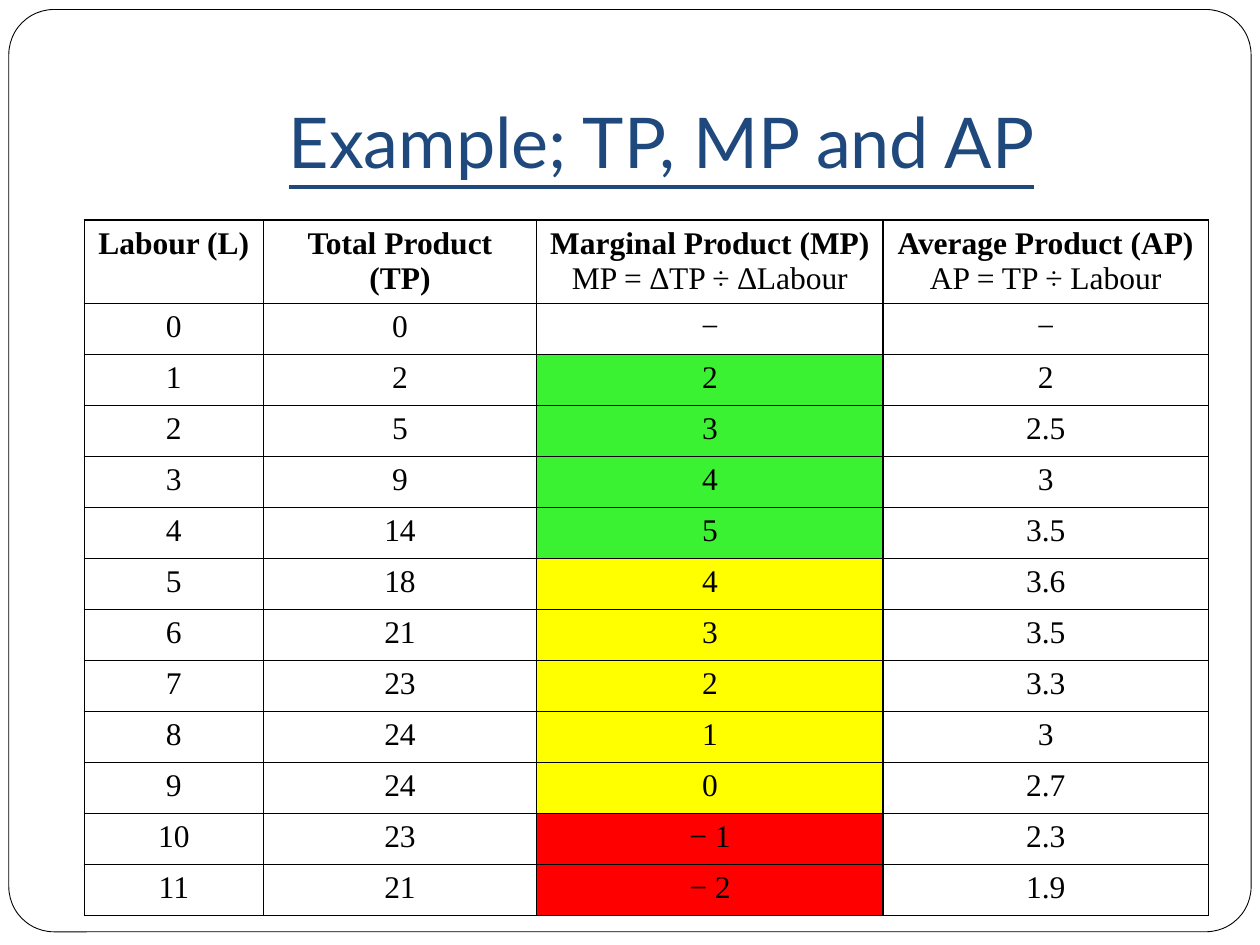
from lxml import etree
from pptx import Presentation
from pptx.dml.color import RGBColor
from pptx.enum.shapes import MSO_SHAPE
from pptx.enum.text import MSO_ANCHOR, PP_ALIGN
from pptx.oxml.ns import qn
from pptx.util import Inches, Pt

ROUND = MSO_SHAPE.ROUNDED_RECTANGLE
BOTTOM = MSO_ANCHOR.BOTTOM
CENTER = PP_ALIGN.CENTER

INK = {
    "black": "000000",
    "white": "FFFFFF",
    "navy": "1F497D",
    "green": "3BF232",
    "yellow": "FFFF00",
    "red": "FF0000",
}
HEADS = [
    ["Labour (L)"],
    ["Total Product (TP)"],
    ["Marginal Product (MP)", "MP = ∆TP ÷ ∆Labour"],
    ["Average Product (AP)", "AP = TP ÷ Labour"],
]
TOTALS = [0, 2, 5, 9, 14, 18, 21, 23, 24, 24, 23, 21]
COLS = [1.42, 2.17, 2.75, 2.58]
HEAD, ROW = 0.66, 0.405


def color(name):
    return RGBColor.from_string(INK[name])


class Deck:
    def __init__(self, wide, high):
        self.prs = Presentation()
        self.prs.slide_width = Inches(wide)
        self.prs.slide_height = Inches(high)
        self.slide = self.prs.slides.add_slide(self.prs.slide_layouts[5])

    def box(self, x, y, w, h):
        wide, high = self.prs.slide_width, self.prs.slide_height
        return [round(wide * x), round(high * y), round(wide * w), round(high * h)]

    def frame(self, x, y, w, h):
        card = self.slide.shapes.add_shape(ROUND, *self.box(x, y, w, h))
        card.adjustments[0] = 0.049
        card.shadow.inherit = False
        card.fill.solid()
        card.fill.fore_color.rgb = color("white")
        card.line.color.rgb = color("black")
        card.line.width = Pt(0.5)
        self.slide.shapes.title.element.addprevious(card.element)

    def title(self, text, x, y, w, h):
        head = self.slide.shapes.title
        head.left, head.top, head.width, head.height = self.box(x, y, w, h)
        body = head.text_frame
        body.text = text
        body.vertical_anchor = BOTTOM
        body.margin_bottom = Inches(0.1)
        line = body.paragraphs[0]
        line.alignment = CENTER
        self.font(line.font, "Lato", 40, "navy")
        line.font.underline = True

    def font(self, font, name, size, ink):
        font.name = name
        font.size = Pt(size)
        font.color.rgb = color(ink)

    def border(self, cell):
        props = cell._tc.get_or_add_tcPr()
        for side in ("lnL", "lnR", "lnT", "lnB"):
            edge = etree.SubElement(props, qn(f"a:{side}"), w=str(Pt(1)))
            fill = etree.SubElement(edge, qn("a:solidFill"))
            etree.SubElement(fill, qn("a:srgbClr"), val=INK["black"])

    def cell(self, cell, lines, fill="white", bold=False):
        self.border(cell)
        cell.fill.solid()
        cell.fill.fore_color.rgb = color(fill)
        cell.text = "\n".join(lines)
        for spot, line in enumerate(cell.text_frame.paragraphs):
            line.alignment = CENTER
            self.font(line.font, "Times New Roman", 18, "black")
            line.font.bold = bold and spot == 0

    def table(self, rows, x, y):
        high = HEAD + ROW * len(rows)
        left, top = self.box(x, y, 0, 0)[:2]
        grid = self.slide.shapes.add_table(
            len(rows) + 1, len(COLS), left, top, Inches(sum(COLS)), Inches(high)
        ).table
        grid.first_row = grid.horz_banding = False
        for col, width in zip(grid.columns, COLS):
            col.width = Inches(width)
        for spot, row in enumerate(grid.rows):
            row.height = Inches(ROW if spot else HEAD)
        for col, lines in enumerate(HEADS):
            self.cell(grid.cell(0, col), lines, bold=True)
        for spot, (texts, fill) in enumerate(rows, 1):
            for col, text in enumerate(texts):
                self.cell(grid.cell(spot, col), [text], fill if col == 2 else "white")


def product_rows():
    rows = [(["0", "0", "−", "−"], "white")]
    last = 0
    for labour in range(1, len(TOTALS)):
        total = TOTALS[labour]
        gain = total - TOTALS[labour - 1]
        fill = "red" if gain < 0 else "green" if gain > last else "yellow"
        shown = f"− {-gain}" if gain < 0 else str(gain)
        mean = f"{round(total / labour, 1):g}"
        rows.append(([str(labour), str(total), shown, mean], fill))
        last = gain
    return rows


def main():
    deck = Deck(10, 7.5)
    deck.frame(0.007, 0.01, 0.986, 0.976)
    deck.title("Example; TP, MP and AP", 0.1, 0.04, 0.85, 0.167)
    deck.table(product_rows(), 0.067, 0.233)
    deck.prs.save("out.pptx")


if __name__ == "__main__":
    main()
